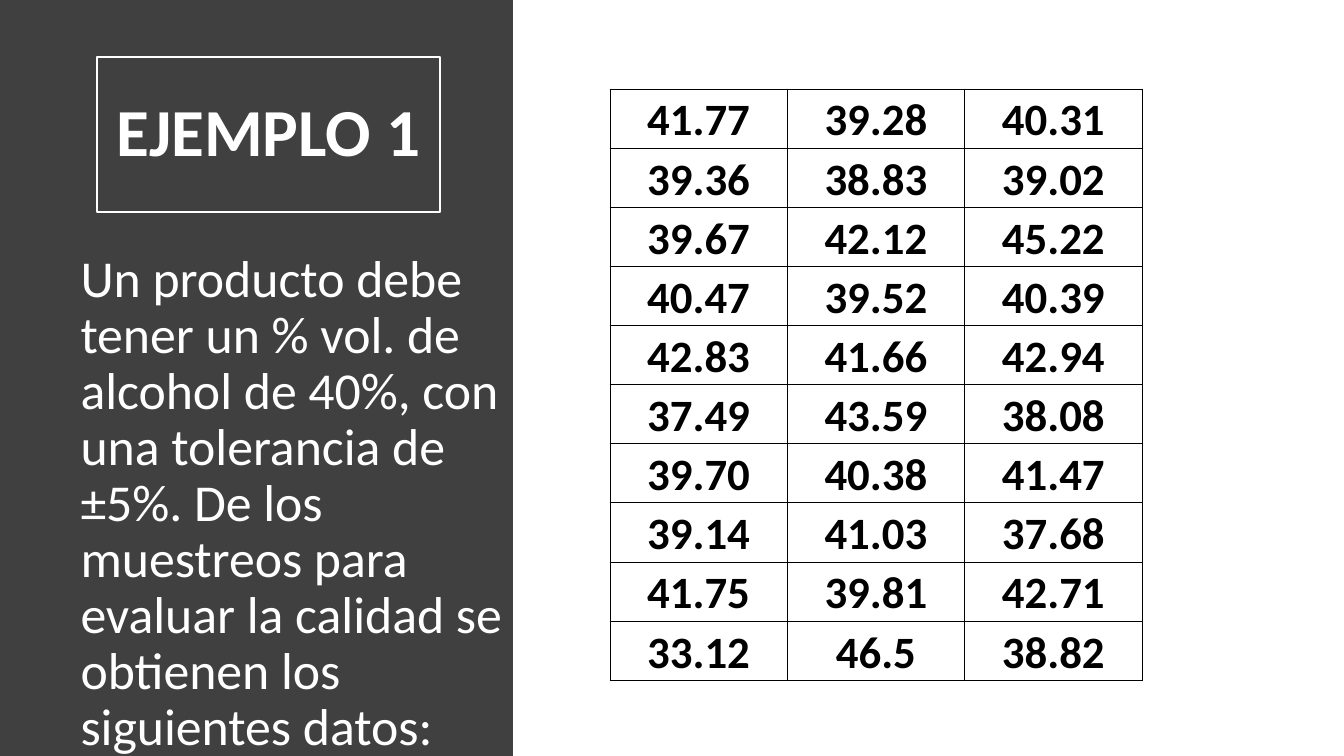
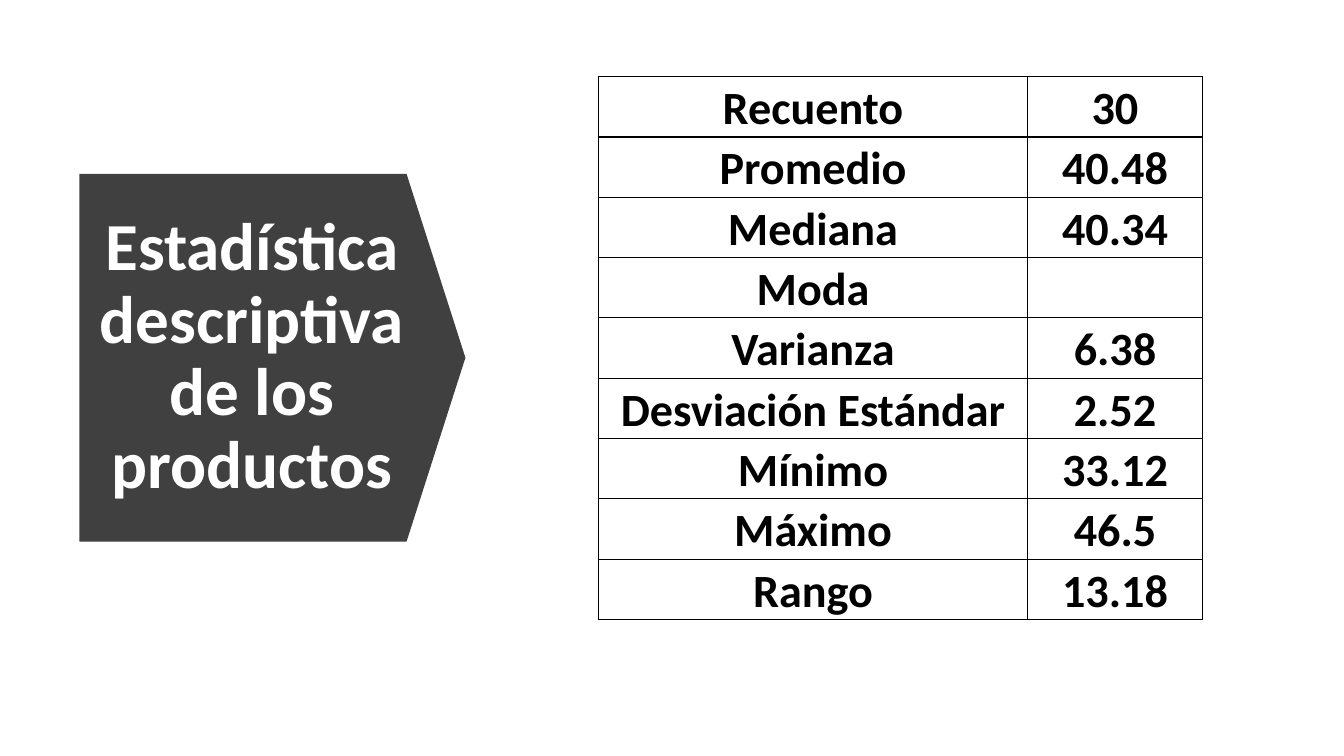
from lxml import etree
from pptx import Presentation
from pptx.dml.color import RGBColor
from pptx.enum import shapes, text
from pptx.oxml import ns
from pptx.util import Cm, Pt

# Content
SAMPLE_TITLE = "EJEMPLO 1"
SAMPLE_TEXT = (
    "Un producto debe tener un % vol. de alcohol de 40%, con una tolerancia de ±5%. "
    "De los muestreos para evaluar la calidad se obtienen los siguientes datos:"
)
SAMPLES = [
    ("41.77", "39.28", "40.31"),
    ("39.36", "38.83", "39.02"),
    ("39.67", "42.12", "45.22"),
    ("40.47", "39.52", "40.39"),
    ("42.83", "41.66", "42.94"),
    ("37.49", "43.59", "38.08"),
    ("39.70", "40.38", "41.47"),
    ("39.14", "41.03", "37.68"),
    ("41.75", "39.81", "42.71"),
    ("33.12", "46.5", "38.82"),
]
STATS_TITLE = "Estadística descriptiva de los productos"
STATS = [
    ("Recuento", "30"),
    ("Promedio", "40.48"),
    ("Mediana", "40.34"),
    ("Moda", ""),
    ("Varianza", "6.38"),
    ("Desviación Estándar", "2.52"),
    ("Mínimo", "33.12"),
    ("Máximo", "46.5"),
    ("Rango", "13.18"),
]

# Shared style
COLORS = {"dark": "404040", "light": "FFFFFF", "ink": "000000"}
FONT = "Calibri"
TITLE = {"size": Pt(48), "bold": True}
BODY = {"size": Pt(37), "bold": False}
CELL_MARGINS = {"margin_left": 0.02, "margin_right": 0.02, "margin_top": 0.02, "margin_bottom": 0}
SLIDE_W, SLIDE_H = Cm(33.87), Cm(19.05)
CENTER, LEFT = text.PP_ALIGN.CENTER, text.PP_ALIGN.LEFT


def rgb(name):
    return RGBColor.from_string(COLORS[name])


def write(tf, words, fmt, color="light", align=CENTER, **spacing):
    p = tf.paragraphs[0]
    for key, value in {"alignment": align, **spacing}.items():
        setattr(p, key, value)
    r = p.add_run()
    r.text = words
    for key, value in {"name": FONT, **fmt}.items():
        setattr(r.font, key, value)
    r.font.color.rgb = rgb(color)


def add_block(slide, kind, box, fill=None, line=None):
    sp = slide.shapes.add_shape(kind, *box)
    sp.shadow.inherit = False
    if fill:
        sp.fill.solid()
        sp.fill.fore_color.rgb = rgb(fill)
    else:
        sp.fill.background()
    if line:
        sp.line.color.rgb = rgb(line)
        sp.line.width = Pt(1.5)
    else:
        sp.line.fill.background()
    return sp


def write_title(sp, words):
    tf = sp.text_frame
    tf.word_wrap = True
    tf.vertical_anchor = text.MSO_ANCHOR.MIDDLE
    write(tf, words, TITLE, line_spacing=0.9)


def border_cell(cell, width):
    tc_pr = cell._tc.get_or_add_tcPr()
    for side in ("lnL", "lnR", "lnT", "lnB"):
        ln = etree.SubElement(tc_pr, ns.qn(f"a:{side}"), w=str(width))
        fill = etree.SubElement(ln, ns.qn("a:solidFill"))
        etree.SubElement(fill, ns.qn("a:srgbClr"), val=COLORS["ink"])


def add_grid(slide, rows, left, top, widths, row_h, size, border):
    frame = slide.shapes.add_table(
        len(rows), len(widths), left, top, sum(widths), row_h * len(rows))
    table = frame.table
    table.first_row = table.horz_banding = False
    for column, width in zip(table.columns, widths):
        column.width = width
    for i, row in enumerate(rows):
        table.rows[i].height = row_h
        for j, words in enumerate(row):
            cell = table.cell(i, j)
            border_cell(cell, border)
            cell.fill.background()
            cell.vertical_anchor = text.MSO_ANCHOR.BOTTOM
            for key, value in CELL_MARGINS.items():
                setattr(cell, key, Cm(value))
            if words:
                write(cell.text_frame, words, {"size": size, "bold": True}, "ink")


def build_sample_slide(slide):
    # Dark side panel with framed title and statement
    add_block(slide, shapes.MSO_SHAPE.RECTANGLE, (0, 0, Cm(12.93), SLIDE_H), fill="dark")
    title = add_block(slide, shapes.MSO_SHAPE.RECTANGLE,
                      (Cm(2.44), Cm(1.43), Cm(8.66), Cm(3.91)), line="light")
    write_title(title, SAMPLE_TITLE)
    statement = slide.shapes.add_textbox(Cm(1.78), Cm(6.25), Cm(11.15), Cm(10.57))
    statement.text_frame.word_wrap = True
    write(statement.text_frame, SAMPLE_TEXT, BODY, align=LEFT,
          line_spacing=0.9, space_before=Pt(10))
    # Sample data
    add_grid(slide, SAMPLES, Cm(15.37), Cm(2.24), [Cm(4.47)] * 3, Cm(1.49), Pt(32), Pt(0.5))


def build_stats_slide(slide):
    # Title in an arrow pointing at the table
    arrow = add_block(slide, shapes.MSO_SHAPE.PENTAGON,
                      (Cm(2), Cm(4.38), Cm(9.73), Cm(9.27)), fill="dark")
    arrow.adjustments[0] = 0.16
    arrow.text_frame.margin_right = Cm(0.53)
    write_title(arrow, STATS_TITLE)
    # Descriptive statistics
    add_grid(slide, STATS, Cm(15.09), Cm(1.93), [Cm(10.8), Cm(4.42)], Cm(1.52), Pt(33), Pt(1))


def main():
    prs = Presentation()
    prs.slide_width, prs.slide_height = SLIDE_W, SLIDE_H
    for build in (build_sample_slide, build_stats_slide):
        build(prs.slides.add_slide(prs.slide_layouts[6]))
    prs.save("out.pptx")


if __name__ == "__main__":
    main()
